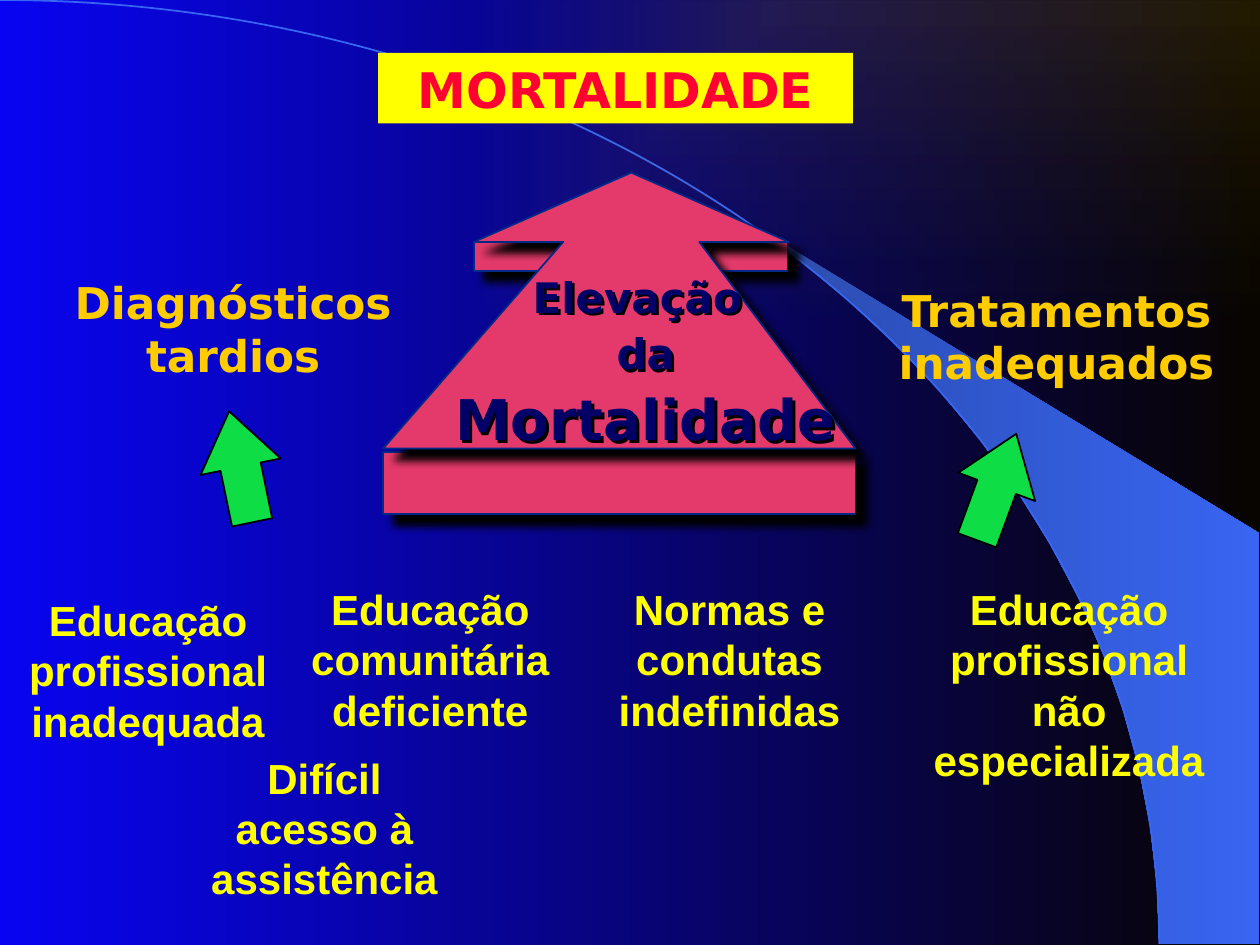
import math
import pptx
import pptx.util
import pptx.dml.color
import pptx.enum.text
import pptx.enum.shapes
import pptx.oxml
import pptx.oxml.ns
from dataclasses import dataclass


@dataclass
class Theme:
    sans: str = "Arial"
    wide: str = "DejaVu Sans"
    blue: str = "0000FF"
    black: str = "000000"
    navy: str = "000066"
    dusk: str = "2449B6"
    sky: str = "3366FF"
    rose: str = "E43A6B"
    edge: str = "022888"
    gold: str = "FFCC00"
    brown: str = "996600"
    yellow: str = "FFFF00"
    red: str = "FF0033"
    green: str = "0FDD45"
    head: int = 28
    cause: int = 25
    body: int = 24
    large: int = 32


theme = Theme()
rgb = pptx.dml.color.RGBColor.from_string
kinds = pptx.enum.shapes.MSO_SHAPE
fit = pptx.enum.text.MSO_AUTO_SIZE
px = 9144
space = pptx.oxml.ns.nsdecls("a")

deck = pptx.Presentation()
deck.slide_width = 1000 * px
deck.slide_height = 750 * px
slide = deck.slides.add_slide(deck.slide_layouts[5])
shapes = slide.shapes


def trace(points, close=True):
    spots = [(x * px, y * px) for x, y in points]
    pen = shapes.build_freeform(*spots[0], scale=1.0)
    pen.add_line_segments(spots[1:], close=close)
    shape = pen.convert_to_shape()
    shape.shadow.inherit = False
    return shape


def write(shape, lines, font, size, color):
    frame = shape.text_frame
    frame.text = "\n".join(lines)
    frame.word_wrap = True
    frame.auto_size = fit.SHAPE_TO_FIT_TEXT
    frame.vertical_anchor = pptx.enum.text.MSO_ANCHOR.TOP
    for para in frame.paragraphs:
        para.alignment = pptx.enum.text.PP_ALIGN.CENTER
        for run in para.runs:
            run.font.name = font
            run.font.size = pptx.util.Pt(size)
            run.font.bold = True
            run.font.color.rgb = rgb(color)
    return frame


back = slide.background.fill
back.gradient()
back.gradient_angle = 0
for stop, color in zip(back.gradient_stops, (theme.blue, theme.black)):
    stop.color.rgb = rgb(color)

start = math.asin(0.64)
turns = [start + (math.pi / 2 - start) * i / 14 for i in range(15)]
curve = [(920 * math.sin(t), 749 - 749 * math.cos(t)) for t in turns]
beam = trace(curve + [(999, 749), (999, 423)])
beam.fill.gradient()
beam.fill.gradient_angle = 0
for stop, color in zip(beam.fill.gradient_stops, (theme.dusk, theme.sky)):
    stop.color.rgb = rgb(color)
beam.line.fill.background()

arc = trace([(0, 0), (920, 749)], False)
arc.fill.background()
arc.line.color.rgb = rgb(theme.sky)
arc.line.width = pptx.util.Pt(1)
leg = next(arc._element.iter(pptx.oxml.ns.qn("a:lnTo")))
knots = "".join(f'<a:pt x="{x * px}" y="{y * px}"/>'
                for x, y in ((508, 0), (920, 335), (920, 749)))
leg.addnext(pptx.oxml.parse_xml(f'<a:cubicBezTo {space}>{knots}</a:cubicBezTo>'))
leg.getparent().remove(leg)

glow = shapes.add_shape(kinds.RECTANGLE, 0, 0, 1000 * px, 750 * px)
glow.shadow.inherit = False
glow.line.fill.background()
glow._element.spPr.find(pptx.oxml.ns.qn("a:prstGeom")).addnext(pptx.oxml.parse_xml(
    f'<a:gradFill {space}><a:gsLst>'
    f'<a:gs pos="0"><a:srgbClr val="{theme.gold}"><a:alpha val="21000"/></a:srgbClr></a:gs>'
    f'<a:gs pos="100000"><a:srgbClr val="{theme.brown}"><a:alpha val="5000"/></a:srgbClr></a:gs>'
    '</a:gsLst><a:path path="rect"><a:fillToRect l="100000" t="0" r="0" b="100000"/>'
    '</a:path></a:gradFill>'))

parts = (
    [(376, 192), (625, 192), (625, 215), (376, 215)],
    [(304, 359), (679, 359), (679, 408), (304, 408)],
    [(304, 356), (679, 356), (555, 192), (626, 192), (501, 137), (376, 192), (447, 192)],
)
casts = []
for points in parts:
    part = trace(points)
    part.fill.solid()
    part.fill.fore_color.rgb = rgb(theme.rose)
    part.line.color.rgb = rgb(theme.edge)
    part.line.width = pptx.util.Pt(1)
    casts.append((part, 5, 8.5))

box = shapes.add_textbox(350 * px, 200 * px, 325 * px, 164 * px)
box.shadow.inherit = False
casts.append((box, 0, 2))
frame = write(box, ["Elevação", "da", "Mortalidade"], theme.wide, theme.body, theme.navy)
frame.paragraphs[2].runs[0].font.size = pptx.util.Pt(theme.large)
for para in frame.paragraphs:
    para.line_spacing = 1.1
gap = frame.paragraphs[0].add_run()
gap.text = " "
gap.font.name = theme.wide
gap.font.size = pptx.util.Pt(theme.head)
gap.font.bold = True

for shape, blur, far in casts:
    shape._element.spPr.find(pptx.oxml.ns.qn("a:effectLst")).append(pptx.oxml.parse_xml(
        f'<a:outerShdw {space} blurRad="{pptx.util.Pt(blur)}" dist="{pptx.util.Pt(far)}" '
        f'dir="2700000" algn="ctr" rotWithShape="0"><a:srgbClr val="{theme.black}"/>'
        '</a:outerShdw>'))

causes = (
    (39, 214, 292, ["Diagnósticos", "tardios"]),
    (677, 220, 323, ["Tratamentos", "inadequados"]),
)
for x, y, w, lines in causes:
    box = shapes.add_textbox(x * px, y * px, w * px, 93 * px)
    write(box, lines, theme.wide, theme.cause, theme.gold)

roots = (
    (0, 467, 235, ["Educação", "profissional inadequada"]),
    (233, 458, 217, ["Educação comunitária deficiente"]),
    (475, 458, 208, ["Normas e", "condutas", "indefinidas"]),
    (697, 458, 303, ["Educação", "profissional", "não especializada"]),
    (142, 592, 231, ["Difícil acesso à assistência"]),
)
for x, y, w, lines in roots:
    box = shapes.add_textbox(x * px, y * px, w * px, 130 * px)
    write(box, lines, theme.sans, theme.body, theme.yellow)

for x, y, turn in ((146, 338, 258.3), (746, 354, 290.2)):
    arrow = shapes.add_shape(kinds.RIGHT_ARROW, x * px, y * px, 90 * px, 65 * px)
    arrow.shadow.inherit = False
    arrow.rotation = turn
    arrow.adjustments[0] = 0.5
    arrow.adjustments[1] = 0.69
    arrow.fill.solid()
    arrow.fill.fore_color.rgb = rgb(theme.green)
    arrow.line.color.rgb = rgb(theme.black)
    arrow.line.width = pptx.util.Pt(1)

title = shapes.title
title.left, title.top, title.width, title.height = 300 * px, 42 * px, 377 * px, 56 * px
title.fill.solid()
title.fill.fore_color.rgb = rgb(theme.yellow)
frame = write(title, ["MORTALIDADE"], theme.wide, theme.head, theme.red)
frame.auto_size = fit.NONE
shapes._spTree.append(title._element)

deck.save("out.pptx")
